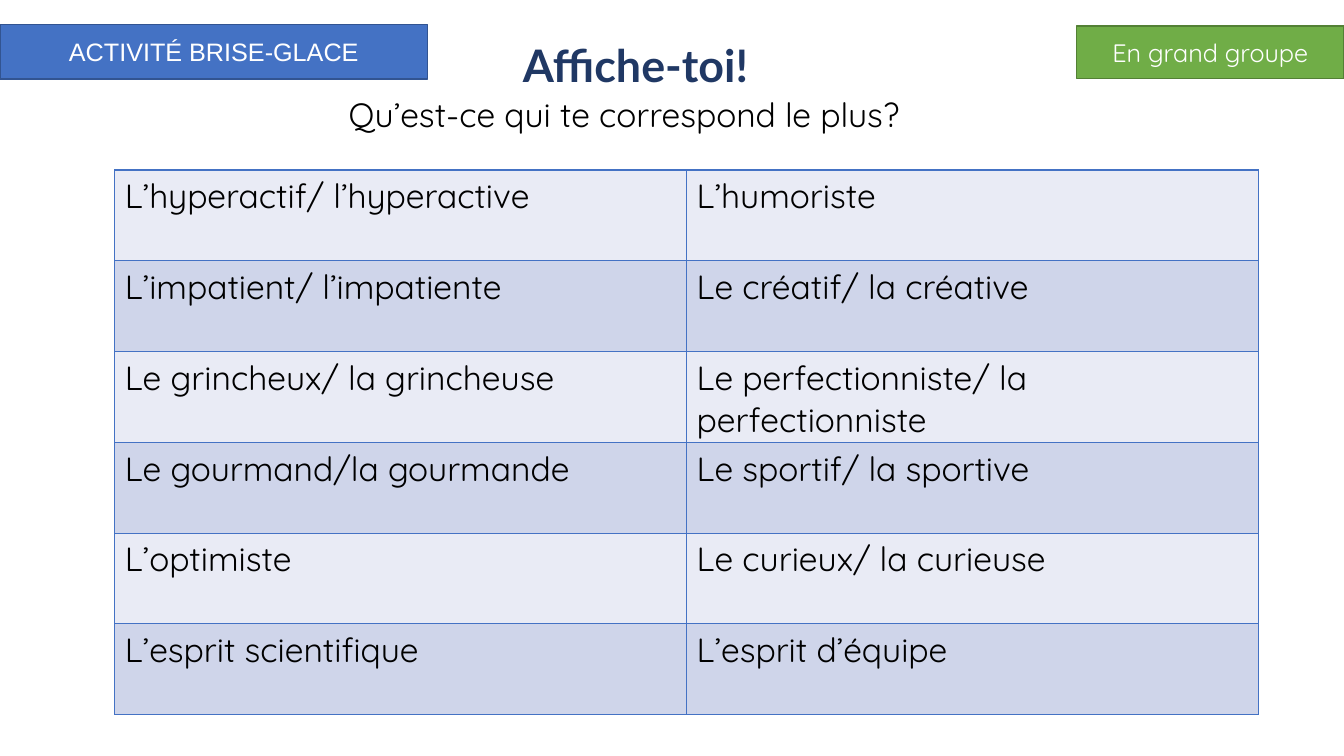
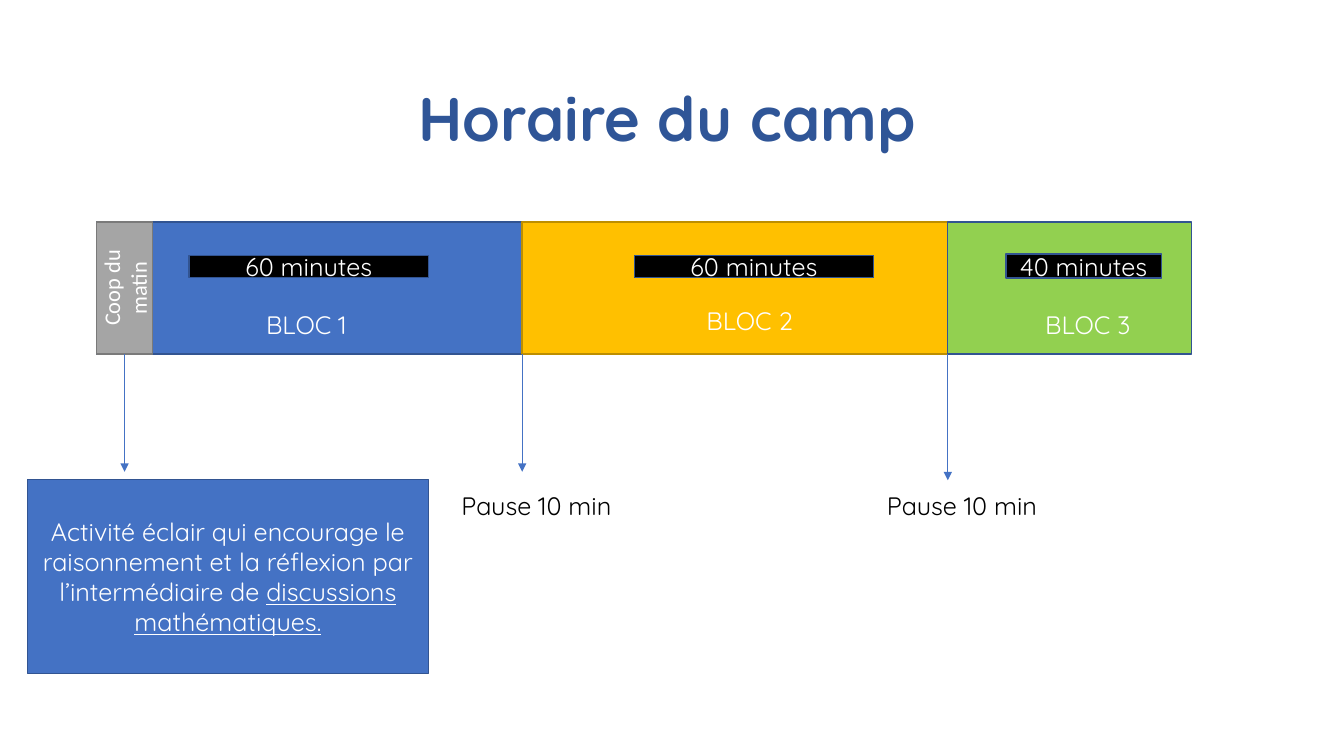
import pptx
import pptx.util
import pptx.dml.color
import pptx.enum.shapes
import pptx.enum.text
import pptx.oxml.ns
from lxml import etree

Pt = pptx.util.Pt
RGB = pptx.dml.color.RGBColor
ALIGN = pptx.enum.text.PP_ALIGN
ANCHOR = pptx.enum.text.MSO_ANCHOR
FIT = pptx.enum.text.MSO_AUTO_SIZE
qn = pptx.oxml.ns.qn

# Shared colours
WHITE = RGB(0xFF, 0xFF, 0xFF)
BLACK = RGB(0, 0, 0)
BLUE = RGB(0x44, 0x72, 0xC4)
BLUE_EDGE = RGB(0x32, 0x54, 0x91)
NAVY = RGB(0x20, 0x38, 0x64)
TITLE_BLUE = RGB(0x2F, 0x55, 0x97)
GREEN = RGB(0x70, 0xAD, 0x47)
GREEN_EDGE = RGB(0x53, 0x80, 0x35)
LIME = RGB(0x92, 0xD0, 0x50)
GOLD = RGB(0xFF, 0xC0, 0x00)
GOLD_EDGE = RGB(0xBD, 0x8E, 0x00)
GREY = RGB(0xA5, 0xA5, 0xA5)
GREY_EDGE = RGB(0x7A, 0x7A, 0x7A)
BANDS = (RGB(0xE9, 0xEB, 0xF5), RGB(0xCF, 0xD5, 0xEA))

# Shared text formats
BODY = {"name": "Quicksand", "size": Pt(18)}
LARGE = {**BODY, "size": Pt(24)}
TITLE_ONLY = 5


def write(p, text, color, fmt):
    """Add one formatted run to a paragraph."""
    r = p.add_run()
    r.text = text
    for key, value in fmt.items():
        setattr(r.font, key, value)
    r.font.color.rgb = color


def add_title(slide, x, y, text, color, fmt):
    sp = slide.shapes.title
    sp.left, sp.top, sp.width, sp.height = Pt(x), Pt(y), Pt(806), Pt(97)
    tf = sp.text_frame
    tf.auto_size = FIT.NONE
    tf.vertical_anchor = ANCHOR.MIDDLE
    p = tf.paragraphs[0]
    p.alignment, p.line_spacing = ALIGN.CENTER, 0.9
    write(p, text, color, {**fmt, "bold": True})


def add_box(slide, x, y, w, h, fill, edge, text="", fmt=BODY):
    sp = slide.shapes.add_shape(pptx.enum.shapes.MSO_SHAPE.RECTANGLE,
                                Pt(x), Pt(y), Pt(w), Pt(h))
    sp.shadow.inherit = False
    sp.fill.solid()
    sp.fill.fore_color.rgb = fill
    sp.line.color.rgb = edge
    sp.line.width = Pt(1)
    tf = sp.text_frame
    tf.word_wrap = True
    tf.vertical_anchor = ANCHOR.MIDDLE
    tf.paragraphs[0].alignment = ALIGN.CENTER
    if text:
        write(tf.paragraphs[0], text, WHITE, fmt)
    return sp


def add_label(slide, x, y, w, h, text, color, fmt=BODY):
    tf = slide.shapes.add_textbox(Pt(x), Pt(y), Pt(w), Pt(h)).text_frame
    tf.word_wrap = True
    write(tf.paragraphs[0], text, color, fmt)


def add_arrow(slide, x, y, length, source=None):
    cx = slide.shapes.add_connector(pptx.enum.shapes.MSO_CONNECTOR.STRAIGHT,
                                    Pt(x), Pt(y), Pt(x), Pt(y + length))
    if source is not None:
        cx.begin_connect(source, 2)
    cx.line.color.rgb = BLUE
    cx.line.width = Pt(0.5)
    spPr = cx.element.spPr
    etree.SubElement(spPr.find(qn("a:ln")), qn("a:tailEnd"), type="triangle")
    etree.SubElement(spPr, qn("a:effectLst"))


def add_borders(cell):
    tcPr = cell._tc.get_or_add_tcPr()
    for i, side in enumerate(("a:lnL", "a:lnR", "a:lnT", "a:lnB")):
        ln = etree.Element(qn(side), w=str(Pt(1)))
        solid = etree.SubElement(ln, qn("a:solidFill"))
        etree.SubElement(solid, qn("a:srgbClr"), val=str(BLUE))
        tcPr.insert(i, ln)


def add_profiles(slide, x, y, w, h, rows):
    """Two-column table with alternating row colours."""
    table = slide.shapes.add_table(len(rows), 2, Pt(x), Pt(y), Pt(w), Pt(h)).table
    table.first_row = table.horz_banding = False
    for i, row in enumerate(rows):
        table.rows[i].height = Pt(h / len(rows))
        for j, text in enumerate(row):
            cell = table.cell(i, j)
            cell.margin_bottom = 0
            cell.fill.solid()
            cell.fill.fore_color.rgb = BANDS[i % 2]
            add_borders(cell)
            write(cell.text_frame.paragraphs[0], text, BLACK, LARGE)


def add_timeline(slide, x, y, h):
    """Blocks side by side, with the morning slot and the breaks."""
    # width, fill, edge, duration, bar (x, y, w, h), name, name (x, y)
    blocks = (
        (304, BLUE, BLUE_EDGE, "60 minutes", (66, 24, 171, 16), "BLOC 1", (114, 59)),
        (304, GOLD, GOLD_EDGE, "60 minutes", (80, 24, 171, 16), "BLOC 2", (124.5, 56)),
        (174, LIME, BLUE_EDGE, "40 minutes", (41.5, 23, 111, 17), "BLOC 3", (62.5, 59)),
    )
    left = x
    for w, fill, edge, duration, (bx, by, bw, bh), name, (nx, ny) in blocks:
        add_box(slide, left, y, w, h, fill, edge)
        bar = add_box(slide, left + bx, y + by, bw, bh, BLACK, BLUE_EDGE, duration)
        bar.text_frame.margin_top = bar.text_frame.margin_bottom = 0
        add_label(slide, left + nx, y + ny, 86, 29, name, WHITE)
        left += w

    # Morning slot
    coop = add_box(slide, x, y, 40, h, GREY, GREY_EDGE, "Coop du matin",
                   {"name": "Calibri", "size": Pt(16)})
    coop.element.txBody.bodyPr.set("vert", "vert270")
    add_arrow(slide, x + 20, y + h, 84, coop)

    # Breaks between blocks
    for bx, length in ((304, 84), (608, 90)):
        add_arrow(slide, x + bx, y + h, length)
        add_label(slide, x + bx - 50.5, y + h + 94, 130, 29, "Pause 10 min", BLACK)


def icebreaker_slide(prs):
    slide = prs.slides.add_slide(prs.slide_layouts[TITLE_ONLY])
    add_box(slide, 0, 17.5, 305.5, 39, BLUE, BLUE_EDGE, "ACTIVITÉ BRISE-GLACE",
            {**BODY, "name": "Arial"})
    add_box(slide, 769, 18.5, 191, 37.5, GREEN, GREEN_EDGE, "En grand groupe")
    add_title(slide, 51, 0, "Affiche-toi!", NAVY, {"name": "Lato", "size": Pt(32)})
    add_label(slide, 242, 63.5, 640, 58, "Qu’est-ce qui te correspond le plus?",
              BLACK, LARGE)
    add_profiles(slide, 82, 121.5, 817, 389, (
        ("L’hyperactif/ l’hyperactive", "L’humoriste"),
        ("L’impatient/ l’impatiente", "Le créatif/ la créative"),
        ("Le grincheux/ la grincheuse", "Le perfectionniste/ la perfectionniste"),
        ("Le gourmand/la gourmande", "Le sportif/ la sportive"),
        ("L’optimiste", "Le curieux/ la curieuse"),
        ("L’esprit scientifique", "L’esprit d’équipe"),
    ))


def schedule_slide(prs):
    slide = prs.slides.add_slide(prs.slide_layouts[TITLE_ONLY])
    add_title(slide, 73.5, 38, "Horaire du camp", TITLE_BLUE, {**BODY, "size": Pt(44)})
    add_timeline(slide, 69, 158.5, 94.5)
    # Description of the morning slot
    sp = add_box(slide, 19.5, 342.5, 286.5, 138.5, BLUE, BLUE_EDGE,
                 "Activité éclair qui encourage le raisonnement et la réflexion "
                 "par l’intermédiaire de ")
    write(sp.text_frame.paragraphs[0], "discussions mathématiques.", WHITE,
          {**BODY, "underline": True})


def main():
    prs = pptx.Presentation()
    prs.slide_width, prs.slide_height = Pt(960), Pt(540)
    icebreaker_slide(prs)
    schedule_slide(prs)
    prs.save("out.pptx")


if __name__ == "__main__":
    main()
